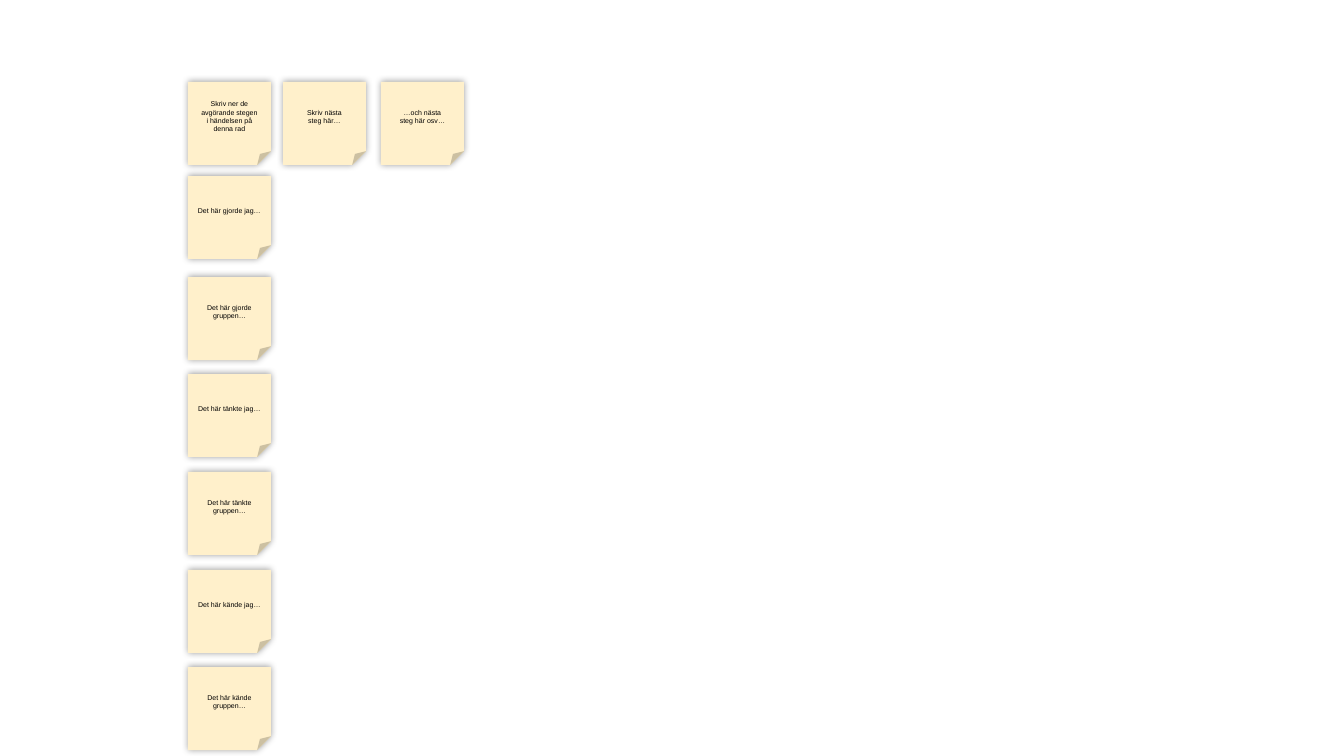
from copy import deepcopy

from pptx import Presentation
from pptx.dml.color import RGBColor
from pptx.enum.shapes import MSO_SHAPE
from pptx.enum.text import MSO_ANCHOR, PP_ALIGN
from pptx.oxml import parse_xml
from pptx.oxml.ns import nsdecls, qn
from pptx.util import Pt

FOLDED = MSO_SHAPE.FOLDED_CORNER
MIDDLE = MSO_ANCHOR.MIDDLE
CENTER = PP_ALIGN.CENTER

PX = 9071  # EMU per px
BLANK_LAYOUT = 6
COLORS = {"note": "FFF0CB", "text": "000000", "shadow": "000000"}

NOTE_SIZE = 83
STEP_TOP = 82
STEP_LEFT = 188

# Top row: left edge and text (\v is a line break)
STEPS = [
    (STEP_LEFT, "Skriv ner de avgörande stegen\vi händelsen på denna rad"),
    (283, "Skriv nästa\vsteg här…"),
    (381, "…och nästa\vsteg här osv…"),
]

# First column below the top row: top edge and text
REFLECTIONS = [
    (176, "Det här gjorde jag…"),
    (277, "Det här gjorde gruppen…"),
    (374, "Det här tänkte jag…"),
    (472, "Det här tänkte gruppen…"),
    (570, "Det här kände jag…"),
    (667, "Det här kände gruppen…"),
]


def write(tf, text, *, size, color, font="Arial", align=CENTER, anchor=MIDDLE):
    tf.word_wrap = True
    tf.vertical_anchor = anchor
    p = tf.paragraphs[0]
    p.text = text
    p.alignment = align
    for r in p.runs:
        r.font.size = Pt(size)
        r.font.name = font
        r.font.color.rgb = RGBColor.from_string(COLORS[color])
    # Line breaks take the same format as the text around them
    for br in p._p.findall(qn("a:br")):
        br.append(deepcopy(p.runs[0]._r.rPr))


def add_glow_shadow(sp, *, blur, opacity):
    sp.shadow.inherit = False
    effects = sp._element.spPr.find(qn("a:effectLst"))
    effects.append(parse_xml(
        f'<a:outerShdw {nsdecls("a")} blurRad="{Pt(blur)}" dist="0" dir="0" '
        f'algn="ctr" rotWithShape="0"><a:srgbClr val="{COLORS["shadow"]}">'
        f'<a:alpha val="{opacity * 1000}"/></a:srgbClr></a:outerShdw>'))


def add_note(s, left, top, text):
    sp = s.shapes.add_shape(FOLDED, left * PX, top * PX, NOTE_SIZE * PX, NOTE_SIZE * PX)
    sp.fill.solid()
    sp.fill.fore_color.rgb = RGBColor.from_string(COLORS["note"])
    sp.line.fill.background()
    add_glow_shadow(sp, blur=5, opacity=40)
    write(sp.text_frame, text, size=5, color="text")


def main():
    prs = Presentation()
    prs.slide_width = 1344 * PX
    prs.slide_height = 756 * PX
    s = prs.slides.add_slide(prs.slide_layouts[BLANK_LAYOUT])

    # Steps of the event
    for left, text in STEPS:
        add_note(s, left, STEP_TOP, text)

    # Actions, thoughts and feelings
    for top, text in REFLECTIONS:
        add_note(s, STEP_LEFT, top, text)

    prs.save("out.pptx")


if __name__ == "__main__":
    main()
